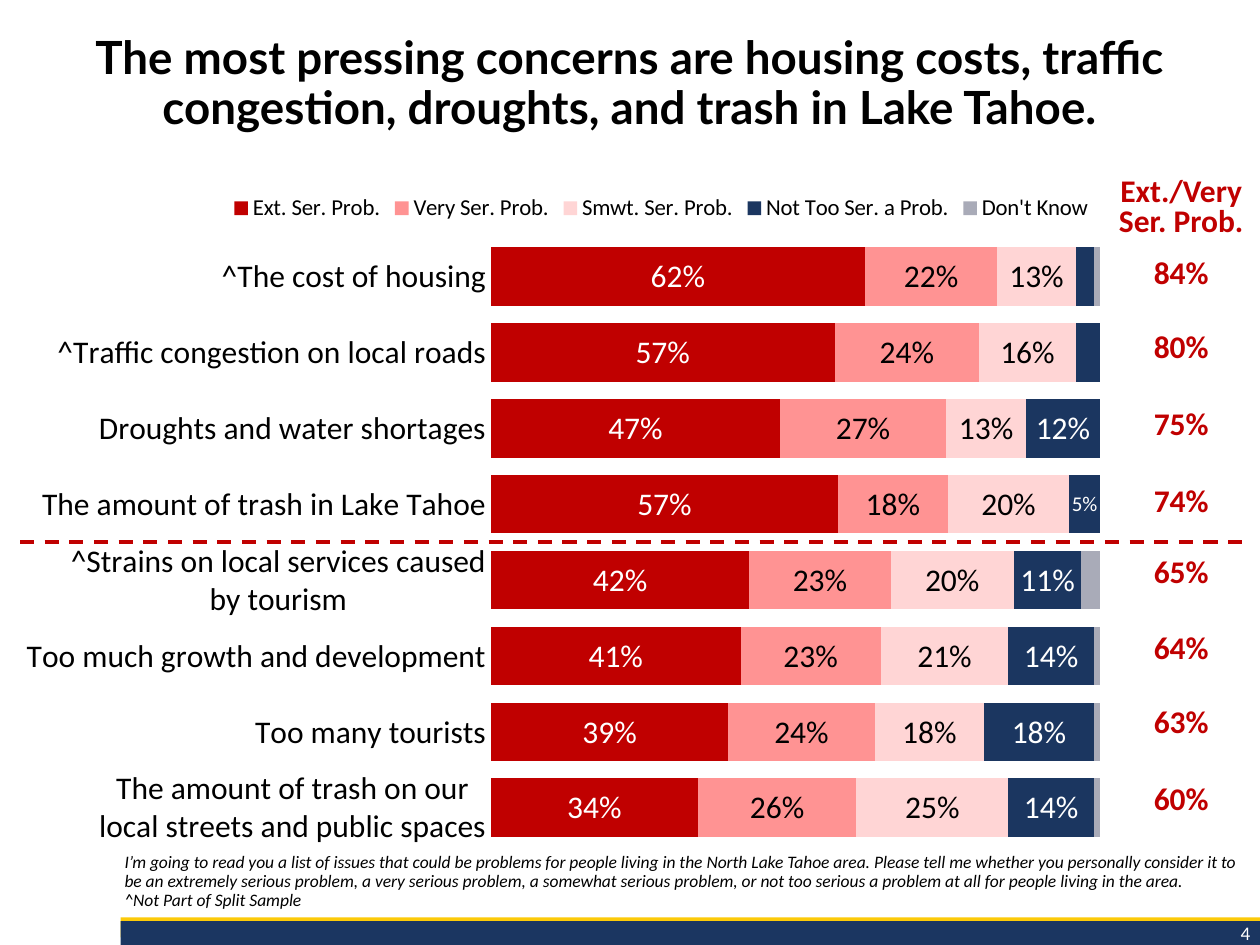
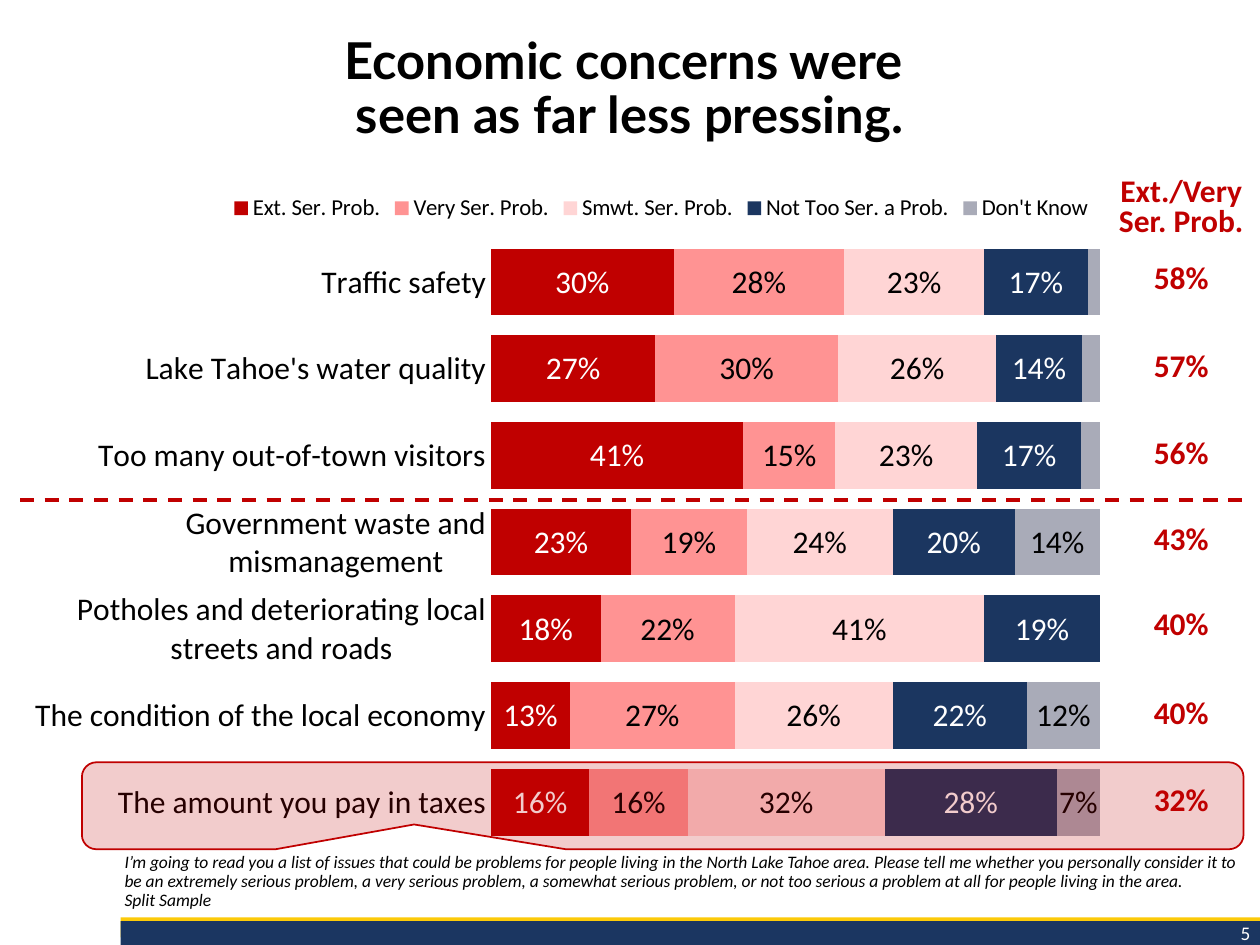
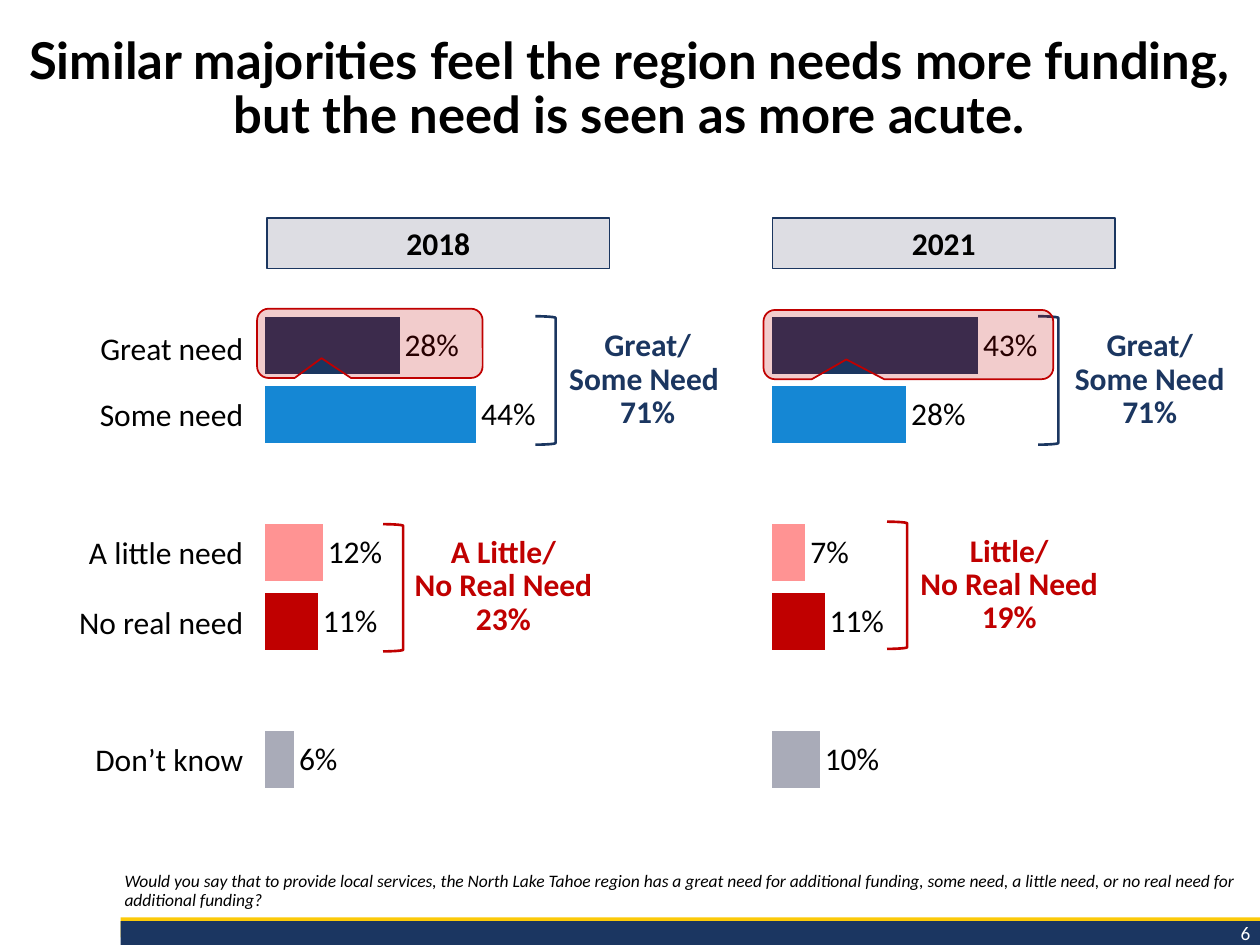
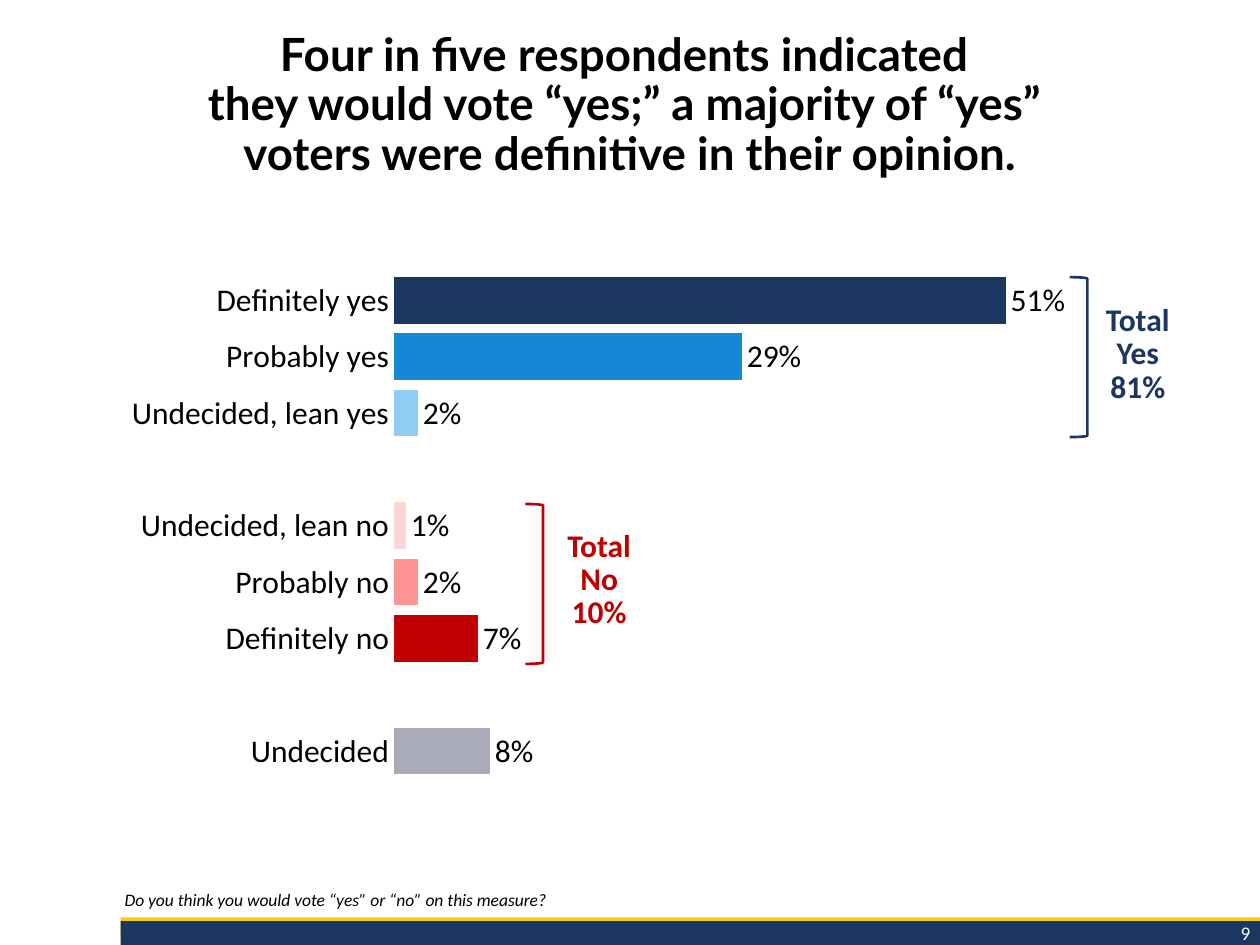
from lxml import etree
from pptx import Presentation
from pptx import util as u
from pptx.chart import data as chart_data
from pptx.dml import color
from pptx.enum import chart as ch, dml, shapes, text
from pptx.oxml import ns

# Shared colours and fonts
NAVY, RED, BLUE, GRAY = "1B3660", "C00000", "1587D4", "A9ABB8"
ROSE, BLUSH, BLACK, WHITE = "FF9393", "FFD5D5", "000000", "FFFFFF"
BAND_NAVY, GOLD, HEADER_GRAY, SKY = "1B3661", "FCCA09", "DDDDE3", "91CCF4"
BODY_FONT, TITLE_FONT = "Calibri", "Lato"
NO_STYLE_TABLE = "{2D5ABB26-0587-4C30-8999-92F81FD0307C}"
CENTER, RIGHT = text.PP_ALIGN.CENTER, text.PP_ALIGN.RIGHT
TOP, MIDDLE, BOTTOM = (text.MSO_ANCHOR.TOP, text.MSO_ANCHOR.MIDDLE,
                       text.MSO_ANCHOR.BOTTOM)

# Survey content
RATINGS = [("Ext. Ser. Prob.", RED, WHITE), ("Very Ser. Prob.", ROSE, BLACK),
           ("Smwt. Ser. Prob.", BLUSH, BLACK),
           ("Not Too Ser. a Prob.", NAVY, WHITE), ("Don't Know", GRAY, BLACK)]
# Each concern: label, shares in percent, combined top two ratings
TOP_CONCERNS = [
    ("^The cost of housing", (62, 22, 13, 3, 1), "84%"),
    ("^Traffic congestion on local roads", (57, 24, 16, 4, 0), "80%"),
    ("Droughts and water shortages", (47, 27, 13, 12, 0), "75%"),
    ("The amount of trash in Lake Tahoe", (57, 18, 20, 5, 0), "74%"),
    ("^Strains on local services caused\nby tourism", (42, 23, 20, 11, 3), "65%"),
    ("Too much growth and development", (41, 23, 21, 14, 1), "64%"),
    ("Too many tourists", (39, 24, 18, 18, 1), "63%"),
    ("The amount of trash on our\nlocal streets and public spaces",
     (34, 26, 25, 14, 1), "60%"),
]
LESSER_CONCERNS = [
    ("Traffic safety", (30, 28, 23, 17, 2), "58%"),
    ("Lake Tahoe's water quality", (27, 30, 26, 14, 3), "57%"),
    ("Too many out-of-town visitors", (41, 15, 23, 17, 3), "56%"),
    ("Government waste and mismanagement", (23, 19, 24, 20, 14), "43%"),
    ("Potholes and deteriorating local streets and roads",
     (18, 22, 41, 19, 0), "40%"),
    ("The condition of the local economy", (13, 27, 26, 22, 12), "40%"),
    ("The amount you pay in taxes", (16, 16, 32, 28, 7), "32%"),
]
CONCERN_QUESTION = (
    "I’m going to read you a list of issues that could be problems for people "
    "living in the North Lake Tahoe area. Please tell me whether you personally "
    "consider it to be an extremely serious problem, a very serious problem, a "
    "somewhat serious problem, or not too serious a problem at all for people "
    "living in the area.\n")
NEEDS = ["Great need", "Some need", "", "A little need", "No real need", "",
         "Don’t know"]
NEED_COLORS = [NAVY, BLUE, None, ROSE, RED, None, GRAY]
VOTES = [("Definitely yes", 0.51, NAVY), ("Probably yes", 0.29, BLUE),
         ("Undecided, lean yes", 0.02, SKY), ("", None, None),
         ("Undecided, lean no", 0.01, "FFD4D4"), ("Probably no", 0.02, ROSE),
         ("Definitely no", 0.07, RED), ("", None, None),
         ("Undecided", 0.08, GRAY)]


# Basic helpers
def rgb(code):
    return color.RGBColor.from_string(code)


def points(box):
    return [u.Pt(length) for length in box]


def style(font, size, code=BLACK, bold=False, italic=False, name=BODY_FONT):
    font.size, font.name = u.Pt(size), name
    font.bold, font.italic = bold, italic
    font.color.rgb = rgb(code)


def write(frame, words, size, code=BLACK, align=None, spacing=None, **looks):
    paragraph = frame.paragraphs[0]
    paragraph.text = words
    paragraph.alignment = align
    if spacing:
        paragraph.line_spacing = spacing
    style(paragraph.font, size, code, **looks)


def add_text(slide, box, words, size, code=BLACK, anchor=TOP, **looks):
    frame = slide.shapes.add_textbox(*points(box)).text_frame
    frame.word_wrap = True
    frame.vertical_anchor = anchor
    write(frame, words, size, code, **looks)


def add_figure(slide, kind, box, fill=None, line=None, width=1.0):
    figure = slide.shapes.add_shape(kind, *points(box))
    figure.shadow.inherit = False
    if fill:
        figure.fill.solid()
        figure.fill.fore_color.rgb = rgb(fill)
    else:
        figure.fill.background()
    if line:
        figure.line.color.rgb = rgb(line)
        figure.line.width = u.Pt(width)
    else:
        figure.line.fill.background()
    return figure


# Page furniture
def add_page(prs, number, title, question, title_size, title_anchor=TOP):
    slide = prs.slides.add_slide(prs.slide_layouts[6])
    rectangle = shapes.MSO_SHAPE.RECTANGLE
    add_figure(slide, rectangle, (69, 524.2, 651, 11.5), GOLD)
    add_figure(slide, rectangle, (69, 526.3, 651, 13.7), BAND_NAVY)
    add_text(slide, (614.9, 522.7, 106.6, 20.9), number, 11, WHITE, align=RIGHT)
    add_text(slide, (64.1, 484.6, 654.5, 38.9), question, 10, anchor=BOTTOM,
             spacing=0.9, italic=True)
    add_text(slide, (0, 16.6, 720, 87.8), title, title_size,
             anchor=title_anchor, align=CENTER, spacing=0.9, bold=True,
             name=TITLE_FONT)
    return slide


# Annotations
def add_divider(slide, y):
    divider = slide.shapes.add_connector(
        shapes.MSO_CONNECTOR.STRAIGHT, *points((11.5, y, 712.1, y)))
    divider.line.color.rgb = rgb(RED)
    divider.line.width = u.Pt(2)
    divider.line.dash_style = dml.MSO_LINE.DASH
    etree.SubElement(divider._element.spPr, ns.qn("a:effectLst"))


def add_highlight(slide, box):
    kind = shapes.MSO_SHAPE.ROUNDED_RECTANGULAR_CALLOUT
    highlight = add_figure(slide, kind, box, RED, RED)
    for index, value in enumerate((-0.214, 0.215, 0.167)):
        highlight.adjustments[index] = value
    tint = highlight._element.spPr.find(ns.qn("a:solidFill"))[0]
    etree.SubElement(tint, ns.qn("a:alpha")).set("val", "20000")


def add_total(slide, code, bracket_box, label_box, words):
    add_figure(slide, shapes.MSO_SHAPE.RIGHT_BRACKET, bracket_box,
               line=code, width=1.5)
    add_text(slide, label_box, words, 18, code, align=CENTER,
             spacing=u.Pt(19), bold=True)


def add_column(slide, left, top, width, entries, heights, align, **looks):
    """One-column table whose texts sit beside the bars of a chart."""
    box = points((left, top, width, sum(heights)))
    frame = slide.shapes.add_table(len(entries), 1, *box)
    table = frame.table
    table.first_row = table.horz_banding = False
    table._tbl.tblPr.find(ns.qn("a:tableStyleId")).text = NO_STYLE_TABLE
    for row, words, height in zip(table.rows, entries, heights):
        row.height = u.Pt(height)
        cell = row.cells[0]
        cell.fill.background()
        cell.vertical_anchor = BOTTOM
        cell.margin_left = cell.margin_right = cell.margin_top = u.Pt(0.72)
        cell.margin_bottom = 0
        write(cell.text_frame, words, 18, align=align, **looks)
    return table


# Charts
def set_layout(parent, index, inner=False, **place):
    for old in parent.findall(ns.qn("c:layout")):
        parent.remove(old)
    layout = etree.Element(ns.qn("c:layout"))
    manual = etree.SubElement(layout, ns.qn("c:manualLayout"))
    settings = {"layoutTarget": "inner"} if inner else {}
    settings.update(xMode="edge", yMode="edge", **place)
    for tag, value in settings.items():
        etree.SubElement(manual, ns.qn("c:" + tag)).set("val", str(value))
    parent.insert(index, layout)


def add_bars(slide, kind, box, categories, series, plot_area, gap):
    data = chart_data.CategoryChartData(number_format="0%")
    data.categories = categories
    for name, values in series:
        data.add_series(name, values)
    chart = slide.shapes.add_chart(kind, *points(box), data).chart
    chart.has_title = chart.has_legend = False
    style(chart.font, 10)
    chart.plots[0].gap_width = gap
    chart.plots[0].vary_by_categories = False
    category_axis, value_axis = chart.category_axis, chart.value_axis
    category_axis.reverse_order = True
    category_axis.major_tick_mark = ch.XL_TICK_MARK.NONE
    category_axis.format.line.fill.background()
    style(category_axis.tick_labels.font, 18)
    value_axis.visible = value_axis.has_major_gridlines = False
    value_axis.minimum_scale = 0
    set_layout(chart.plots[0]._element.getparent(), 0, inner=True,
               **dict(zip("xywh", plot_area)))
    return chart


def label_values(series, code=BLACK):
    labels = series.data_labels
    labels.show_value = True
    labels.number_format, labels.number_format_is_linked = "0%", False
    style(labels.font, 18, code)
    return labels


def paint(filled, code):
    filled.format.fill.solid()
    filled.format.fill.fore_color.rgb = rgb(code)


def fit_narrow_labels(series, code):
    """Drop labels under 5% and shrink those that just fit."""
    for index, value in enumerate(series.values):
        label = series.points[index].data_label
        if value < 0.05:
            entry = label._get_or_add_dLbl()
            for part in list(entry)[1:]:
                entry.remove(part)
            etree.SubElement(entry, ns.qn("c:delete")).set("val", "1")
        elif value < 0.06:
            style(label.font, 12, code)


def add_rating_chart(slide, concerns):
    shares = zip(*(row[1] for row in concerns))
    series = [(rating[0], [share / 100 for share in column])
              for rating, column in zip(RATINGS, shares)]
    chart = add_bars(slide, ch.XL_CHART_TYPE.BAR_STACKED_100,
                     (0, 104.4, 648, 391), [row[0] for row in concerns],
                     series, (0.433, 0.082, 0.537, 0.887), 30)
    chart.plots[0].overlap = 100
    for rating, (_, fill, ink) in zip(chart.series, RATINGS):
        paint(rating, fill)
        label_values(rating, ink)
        fit_narrow_labels(rating, ink)
    chart.has_legend = True
    chart.legend.position = ch.XL_LEGEND_POSITION.TOP
    chart.legend.include_in_layout = False
    style(chart.legend.font, 13)
    set_layout(chart.legend._element, 1, x=0.2, y=0.01)


def add_answer_chart(slide, box, categories, values, colors, plot_area, maximum):
    chart = add_bars(slide, ch.XL_CHART_TYPE.BAR_CLUSTERED, box, categories,
                     [("Series 1", values)], plot_area, 21)
    chart.value_axis.maximum_scale = maximum
    chart.value_axis.major_unit = 0.15
    answers = chart.series[0]
    paint(answers, BLUE)
    for index, code in enumerate(colors):
        if code:
            paint(answers.points[index], code)
    label_values(answers).position = ch.XL_LABEL_POSITION.OUTSIDE_END
    return chart


# Slides
def concern_slide(prs, number, title, title_size, note, concerns, heights,
                  divider_y):
    slide = add_page(prs, number, title, CONCERN_QUESTION + note, title_size)
    add_rating_chart(slide, concerns)
    entries = ["Ext./Very Ser. Prob."] + [row[2] for row in concerns]
    totals = add_column(slide, 633.6, 103, 82.8, entries, [34] + heights,
                        CENTER, code=RED, bold=True)
    totals.cell(0, 0).text_frame.paragraphs[0].line_spacing = u.Pt(17)
    add_divider(slide, divider_y)
    return slide


def need_slide(prs):
    slide = add_page(
        prs, "6", "Similar majorities feel the region needs more funding, "
        "but the need is seen as more acute.",
        "Would you say that to provide local services, the North Lake Tahoe "
        "region has a great need for additional funding, some need, a little "
        "need, or no real need for additional funding?", 29)
    add_column(slide, 4.3, 187.9, 135.4, NEEDS,
               [22.3, 38.2, 36.7, 42.5, 39.6, 36.7, 41.8], RIGHT)
    years = [("2018", 141.1, 152.6, [0.28, 0.44, None, 0.12, 0.11, None, 0.06]),
             ("2021", 430.6, 441.4, [0.43, 0.28, None, 0.07, 0.11, None, 0.1])]
    for year, chart_left, header_left, shares in years:
        chart = add_answer_chart(
            slide, (chart_left, 172.1, 223.2, 303.1), list("1234567"), shares,
            NEED_COLORS, (0.047, 0.019, 0.921, 0.911), 0.75)
        chart.category_axis.tick_label_position = ch.XL_TICK_LABEL_POSITION.NONE
        header = add_figure(slide, shapes.MSO_SHAPE.RECTANGLE,
                            (header_left, 124.6, 195.8, 28.8),
                            HEADER_GRAY, NAVY, 0.75)
        write(header.text_frame, year, 18, align=CENTER, bold=True)
    add_total(slide, NAVY, (306, 180.7, 11.5, 73.4), (316.1, 185, 108, 64.8),
              "Great/\nSome Need \n71%")
    add_total(slide, RED, (218.9, 299.5, 11.5, 72.7),
              (226.8, 303.1, 121.7, 64.8), "A Little/\nNo Real Need\n23%")
    add_total(slide, NAVY, (593.3, 180.7, 11.5, 73.4),
              (601.9, 185, 110.2, 64.8), "Great/\nSome Need\n71%")
    add_total(slide, RED, (506.9, 298.1, 11.5, 72.7),
              (515.5, 302.4, 122.4, 64.8), "Little/\nNo Real Need\n19%")
    add_highlight(slide, (146.9, 176.4, 128.9, 39.6))
    add_highlight(slide, (436.3, 177.1, 165.6, 39.6))


def vote_slide(prs):
    slide = add_page(
        prs, "9", "Four in five respondents indicated \nthey would vote “yes;” "
        "a majority of “yes” \nvoters were definitive in their opinion.",
        "Do you think you would vote “yes” or “no” on this measure?", 26.1,
        MIDDLE)
    answers, shares, colors = zip(*VOTES)
    add_answer_chart(slide, (30.2, 144, 625, 329.8), answers, shares, colors,
                     (0.312, 0.035, 0.658, 0.879), 0.6)
    add_total(slide, NAVY, (611.3, 158.4, 10.1, 91.4),
              (621.4, 170.6, 57.6, 64.8), "Total Yes\n81%")
    add_total(slide, RED, (300.2, 288, 10.1, 91.4),
              (310.3, 299.5, 64.1, 64.8), "Total No\n10%")


def main():
    prs = Presentation()
    prs.slide_width, prs.slide_height = u.Pt(720), u.Pt(540)
    concern_slide(
        prs, "4", "The most pressing concerns are housing costs, traffic "
        "congestion, droughts, and trash in Lake Tahoe.", 26.1,
        "^Not Part of Split Sample", TOP_CONCERNS,
        [29.5, 42.5, 43.9, 43.9, 41, 43.2, 42.5, 43.9], 309.6)
    lesser = concern_slide(
        prs, "5", "Economic concerns were \nseen as far less pressing.", 29,
        "Split Sample", LESSER_CONCERNS,
        [32.4, 50.4, 49.7, 49, 49, 50.4, 49.7], 285.8)
    add_highlight(lesser, (46.8, 435.6, 663.8, 49.7))
    need_slide(prs)
    vote_slide(prs)
    prs.save("out.pptx")


if __name__ == "__main__":
    main()
